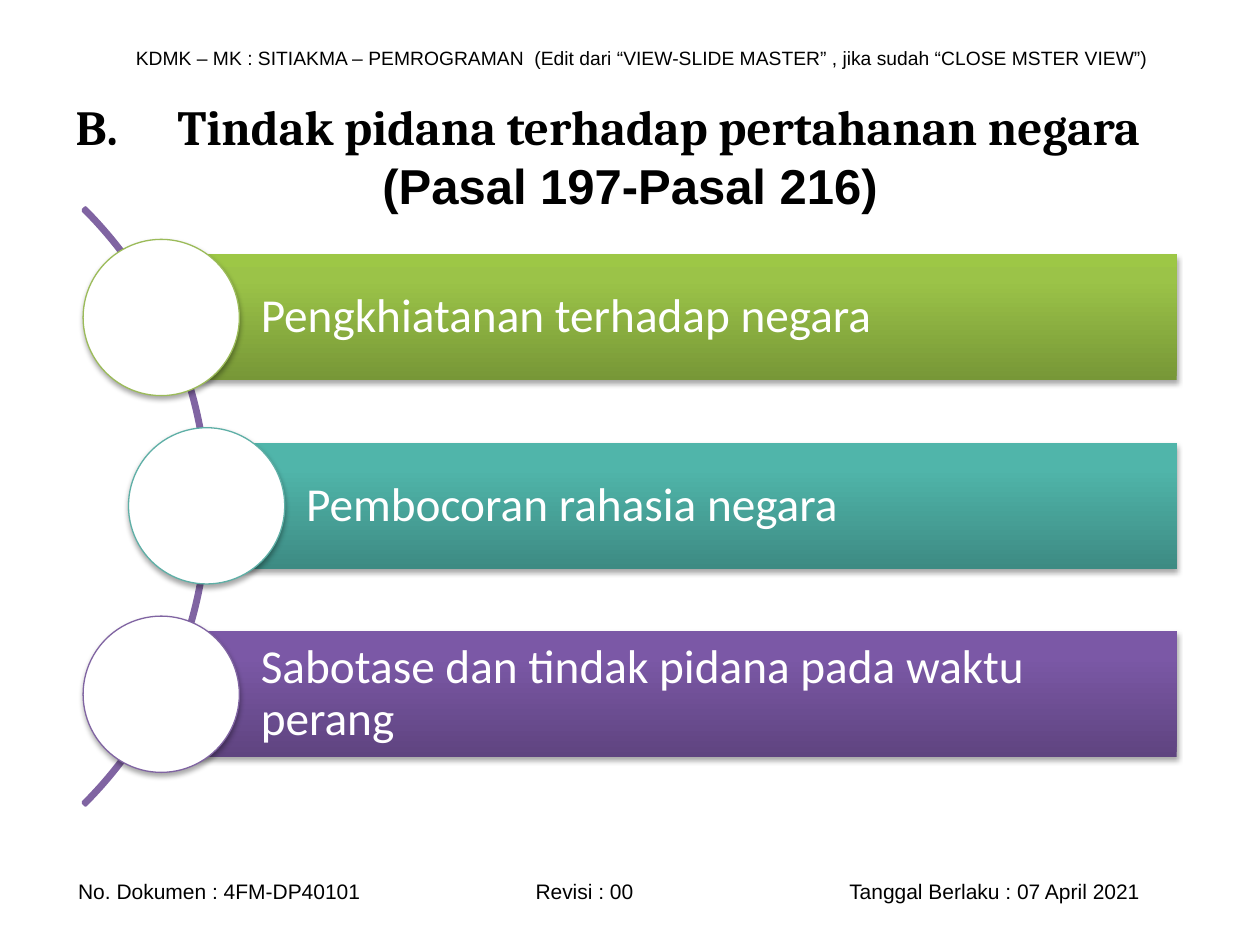
from copy import deepcopy

from lxml import etree
from pptx import Presentation
from pptx.dml.color import RGBColor
from pptx.enum.shapes import MSO_SHAPE
from pptx.enum.text import MSO_ANCHOR, MSO_AUTO_SIZE, PP_ALIGN
from pptx.oxml.ns import qn
from pptx.util import Inches, Pt

LEFT, CENTER = PP_ALIGN.LEFT, PP_ALIGN.CENTER
MIDDLE = MSO_ANCHOR.MIDDLE
NO_FIT = MSO_AUTO_SIZE.NONE
RECTANGLE, OVAL, ARC = MSO_SHAPE.RECTANGLE, MSO_SHAPE.OVAL, MSO_SHAPE.BLOCK_ARC

COLORS = {"text": "000000", "white": "FFFFFF", "arc": "8064A2", "shadow": "000000"}

# Text, circle outline, bar gradient from bottom to top, indent from the left
ITEMS = [
    ("Pengkhiatanan terhadap negara", "9BBB59", ("779737", "9BC348", "9DC746"), 0),
    ("Pembocoran rahasia negara", "5EAFA6", ("3D8B83", "50B5AA", "4EB8AC"), 0.36),
    ("Sabotase dan tindak pidana pada waktu perang", "8064A2",
     ("5F4480", "7B58A6", "7C57A8"), 0),
]
STOPS = (0, 0.8, 1)
CIRCLE, BAR = 1.24, 1.0


def rgb(value):
    return RGBColor.from_string(value)


def write(para, text, size, font, color=COLORS["text"], bold=False, align=LEFT):
    para.alignment = align
    span = para.add_run()
    span.text = text
    span.font.size = Pt(size)
    span.font.name = font
    span.font.bold = bold
    span.font.color.rgb = rgb(color)


def set_frame(frame, margins=(0.1, 0.05, 0.1, 0.05)):
    frame.word_wrap = True
    frame.auto_size = NO_FIT
    frame.vertical_anchor = MIDDLE
    (frame.margin_left, frame.margin_top,
     frame.margin_right, frame.margin_bottom) = map(Inches, margins)
    return frame.paragraphs[0]


def add_shape(page, kind, box):
    shape = page.shapes.add_shape(kind, *map(Inches, box))
    shape.shadow.inherit = False
    return shape


def add_shadow(shape):
    effects = shape._element.spPr.find(qn("a:effectLst"))
    shadow = etree.SubElement(effects, qn("a:outerShdw"), blurRad=str(Pt(3.1)),
                              dist=str(Pt(1.8)), dir="5400000", rotWithShape="0")
    color = etree.SubElement(shadow, qn("a:srgbClr"), val=COLORS["shadow"])
    etree.SubElement(color, qn("a:alpha"), val="35000")


def fill_gradient(shape, colors):
    shape.fill.gradient()
    shape.fill.gradient_angle = 90
    stop_list = shape._element.spPr.find(".//" + qn("a:gsLst"))
    stop_list.append(deepcopy(stop_list[-1]))
    for stop, position, color in zip(shape.fill.gradient_stops, STOPS, colors):
        stop.position = position
        stop.color.rgb = rgb(color)


def add_line(page, box, text, size, inset=0.1, tabs=()):
    """Header or footer line, with tab stops in inches from the text edge."""
    frame = page.shapes.add_textbox(*map(Inches, box)).text_frame
    para = set_frame(frame, (inset, 0.05, 0.1, 0.05))
    if tabs:
        tab_list = etree.SubElement(para._p.get_or_add_pPr(), qn("a:tabLst"))
        for tab in tabs:
            etree.SubElement(tab_list, qn("a:tab"), pos=str(Inches(tab)), algn="l")
    write(para, text, size, "Arial")


def add_title(page, box):
    title = page.shapes.title
    title.left, title.top, title.width, title.height = map(Inches, box)
    para = set_frame(title.text_frame)
    properties = para._p.get_or_add_pPr()
    properties.set("marL", str(Inches(0.81)))
    properties.set("indent", str(Inches(-0.81)))
    etree.SubElement(properties, qn("a:buFont"), typeface="+mj-lt")
    etree.SubElement(properties, qn("a:buAutoNum"), type="alphaUcPeriod", startAt="2")
    write(para, "Tindak pidana terhadap pertahanan negara", 28, "Cambria", bold=True)
    write(title.text_frame.add_paragraph(), "(Pasal 197-Pasal 216)", 28, "Arial",
          bold=True, align=CENTER)


def add_item(page, box, text, outline, gradient):
    """Bar that starts behind the middle of a circle."""
    left, top, width, height = box
    bar = add_shape(page, RECTANGLE, (left + CIRCLE / 2, top + (height - BAR) / 2,
                                      width - CIRCLE / 2, BAR))
    fill_gradient(bar, gradient)
    bar.line.fill.background()
    add_shadow(bar)
    para = set_frame(bar.text_frame, (0.79, 0.07, 0.07, 0.07))
    para.line_spacing = 0.9
    write(para, text, 27, "Calibri", COLORS["white"])

    circle = add_shape(page, OVAL, (left, top, CIRCLE, CIRCLE))
    circle.fill.solid()
    circle.fill.fore_color.rgb = rgb(COLORS["white"])
    circle.line.color.rgb = rgb(outline)
    circle.line.width = Pt(0.75)
    add_shadow(circle)


def add_curved_list(page, box):
    left, top, width, height = box
    # Arc behind the circles, from 315 to 45 degrees
    arc = add_shape(page, ARC, (left - 5.7, top - 1.23, 6.7, 6.7))
    for index, value in enumerate((189, 27, 0.004)):
        arc.adjustments[index] = value
    arc.fill.background()
    arc.line.color.rgb = rgb(COLORS["arc"])
    arc.line.width = Pt(2)

    pitch = (height - CIRCLE) / (len(ITEMS) - 1)
    for row, (text, outline, gradient, shift) in enumerate(ITEMS):
        add_item(page, (left + shift, top + row * pitch, width - shift, CIRCLE),
                 text, outline, gradient)


def main():
    deck = Presentation()
    deck.slide_width, deck.slide_height = Inches(10), Inches(7.5)
    page = deck.slides.add_slide(deck.slide_layouts[5])
    # Header and footer
    add_line(page, (0.98, 0.31, 8.35, 0.29),
             "KDMK – MK : SITIAKMA – PEMROGRAMAN  (Edit dari “VIEW-SLIDE MASTER” , "
             "jika sudah “CLOSE MSTER VIEW”)", 11)
    add_line(page, (0.2, 6.92, 9.45, 0.3),
             "No. Dokumen : 4FM-DP40101\tRevisi : 00\tTanggal Berlaku : 07 April 2021",
             12, inset=0.42, tabs=(3.63, 6.12))
    # Title and list
    add_title(page, (0.5, 0.61, 9, 1.25))
    add_curved_list(page, (0.66, 1.9, 8.68, 4.23))
    deck.save("out.pptx")


if __name__ == "__main__":
    main()
